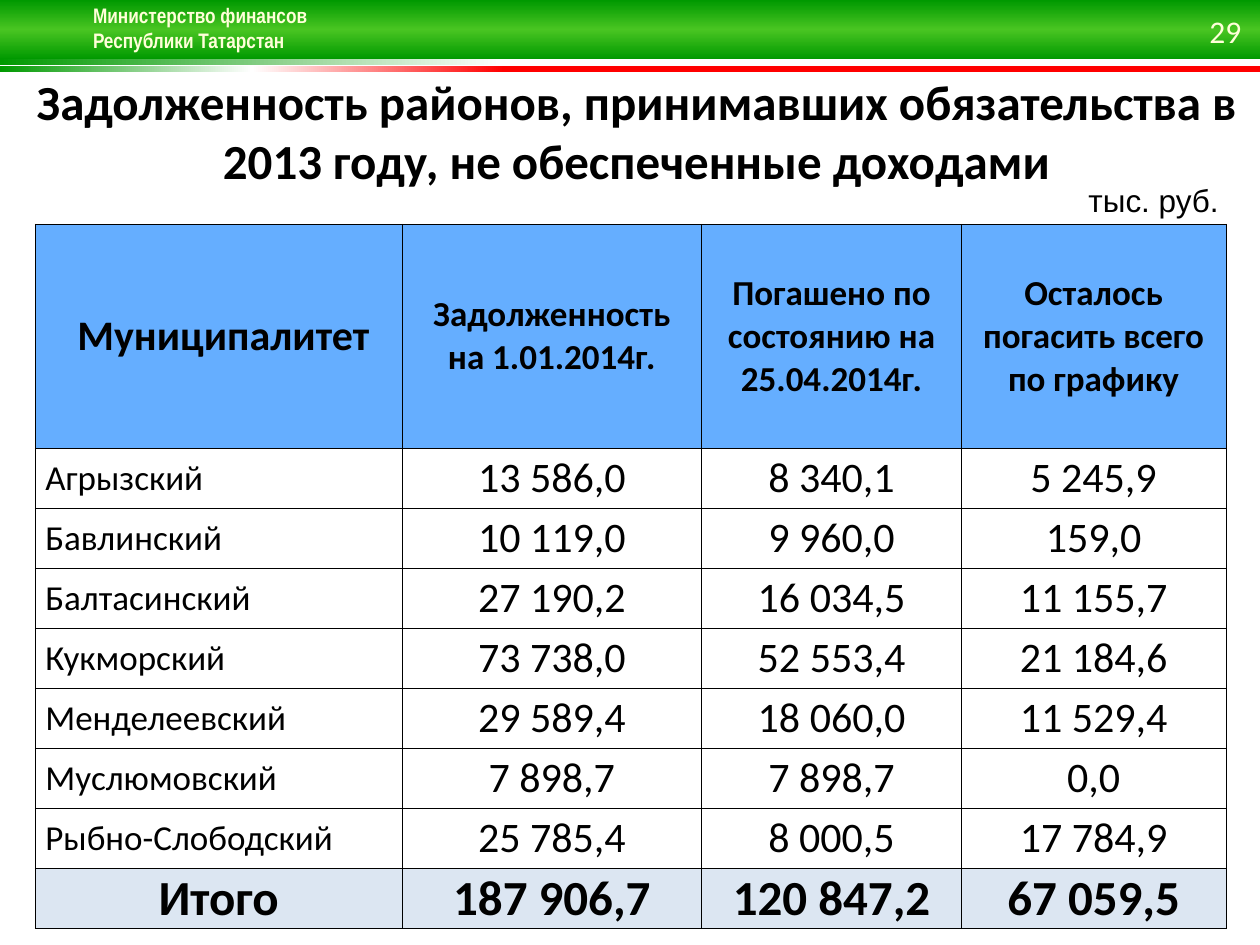
import pptx
import pptx.util
import pptx.dml.color
import pptx.enum.shapes
import pptx.enum.text
import pptx.oxml
import pptx.oxml.ns
import lxml.etree

Inches = pptx.util.Inches
Pt = pptx.util.Pt
qn = pptx.oxml.ns.qn
Align = pptx.enum.text.PP_ALIGN
Anchor = pptx.enum.text.MSO_ANCHOR

COLORS = {
    "black": "000000",
    "white": "FFFFFF",
    "cream": "FFFFD9",
    "green": "009900",
    "light_green": "49C522",
    "red": "FF0000",
    "header": "65AEFF",
    "total": "DCE6F2",
}

FORMATS = {
    "ministry": {"name": "Arial Narrow", "size": Pt(12), "bold": True},
    "title": {"name": "Calibri", "size": Pt(28), "bold": True},
    "page": {"name": "Calibri", "size": Pt(18), "bold": False},
    "unit": {"name": "Arial", "size": Pt(18), "bold": False},
    "corner": {"name": "Calibri", "size": Pt(24), "bold": True},
    "header": {"name": "Calibri", "size": Pt(20), "bold": True},
    "district": {"name": "Calibri", "size": Pt(20), "bold": False},
    "amount": {"name": "Calibri", "size": Pt(24), "bold": False},
    "total": {"name": "Calibri", "size": Pt(28), "bold": True},
}

HEADINGS = [
    " Муниципалитет",
    "Задолженность на 1.01.2014г.",
    "Погашено по состоянию на 25.04.2014г.",
    "Осталось погасить всего по графику",
]
DEBTS = [
    ["Агрызский", "13 586,0", "8 340,1", "5 245,9"],
    ["Бавлинский", "10 119,0", "9 960,0", "159,0"],
    ["Балтасинский", "27 190,2", "16 034,5", "11 155,7"],
    ["Кукморский", "73 738,0", "52 553,4", "21 184,6"],
    ["Менделеевский", "29 589,4", "18 060,0", "11 529,4"],
    ["Муслюмовский", "7 898,7", "7 898,7", "0,0"],
    ["Рыбно-Слободский", "25 785,4", "8 000,5", "17 784,9"],
]
TOTALS = ["Итого", "187 906,7", "120 847,2", "67 059,5"]


class DebtSlide:
    def __init__(self, presentation):
        self.slide = presentation.slides.add_slide(presentation.slide_layouts[5])

    def color(self, name):
        return pptx.dml.color.RGBColor.from_string(COLORS[name])

    def fill_text(self, frame, text, style, color="black", align=Align.LEFT):
        paragraph = frame.paragraphs[0]
        paragraph.alignment = align
        for index, line in enumerate(text.split("\n")):
            if index:
                paragraph.add_line_break()
            run = paragraph.add_run()
            run.text = line
            for key, value in FORMATS[style].items():
                setattr(run.font, key, value)
            run.font.color.rgb = self.color(color)
        return paragraph

    def band(self, top, height, stops, angle):
        band = self.slide.shapes.add_shape(
            pptx.enum.shapes.MSO_SHAPE.RECTANGLE,
            0, Inches(top), Inches(10), Inches(height))
        band.shadow.inherit = False
        band.line.fill.background()
        band.fill.gradient()
        band.fill.gradient_angle = angle
        stop_list = next(band._element.iter(qn("a:gsLst")))
        for default_stop in list(stop_list):
            stop_list.remove(default_stop)
        for position, name in stops:
            stop = lxml.etree.SubElement(stop_list, qn("a:gs"), pos=str(position * 1000))
            lxml.etree.SubElement(stop, qn("a:srgbClr"), val=COLORS[name])

    def title(self, text, left, top, width, height):
        title = self.slide.shapes.title
        title.left, title.top = Inches(left), Inches(top)
        title.width, title.height = Inches(width), Inches(height)
        frame = title.text_frame
        layout = {
            "word_wrap": True,
            "auto_size": pptx.enum.text.MSO_AUTO_SIZE.NONE,
            "vertical_anchor": Anchor.TOP,
            "margin_left": Inches(0.19),
        }
        for key, value in layout.items():
            setattr(frame, key, value)
        self.fill_text(frame, text, "title", align=Align.CENTER)

    def label(self, text, left, top, width, height, style, color, wrap=True):
        box = self.slide.shapes.add_textbox(
            Inches(left), Inches(top), Inches(width), Inches(height))
        box.text_frame.word_wrap = wrap
        return self.fill_text(box.text_frame, text, style, color)

    def text_shadow(self, paragraph):
        for run in paragraph.runs:
            effects = pptx.oxml.parse_xml(
                f'<a:effectLst {pptx.oxml.ns.nsdecls("a")}>'
                '<a:outerShdw blurRad="38100" dist="38100" dir="2700000">'
                f'<a:srgbClr val="{COLORS["black"]}"><a:alpha val="60000"/></a:srgbClr>'
                '</a:outerShdw></a:effectLst>')
            run.font._element.find(qn("a:solidFill")).addnext(effects)

    def borders(self, cell):
        properties = cell._tc.get_or_add_tcPr()
        for side in ("lnL", "lnR", "lnT", "lnB"):
            line = lxml.etree.SubElement(properties, qn(f"a:{side}"), w=str(Pt(0.5)))
            fill = lxml.etree.SubElement(line, qn("a:solidFill"))
            lxml.etree.SubElement(fill, qn("a:srgbClr"), val=COLORS["black"])

    def cell(self, cell, text, style, align, fill):
        layout = {
            "vertical_anchor": Anchor.MIDDLE,
            "margin_left": Inches(0.08),
            "margin_right": Inches(0.08),
            "margin_top": 0,
            "margin_bottom": 0,
        }
        for key, value in layout.items():
            setattr(cell, key, value)
        self.borders(cell)
        if fill:
            cell.fill.solid()
            cell.fill.fore_color.rgb = self.color(fill)
        else:
            cell.fill.background()
        self.fill_text(cell.text_frame, text, style, align=align)

    def table(self, left, top, height, widths, header_height):
        rows = [HEADINGS, *DEBTS, TOTALS]
        table = self.slide.shapes.add_table(
            len(rows), len(widths), Inches(left), Inches(top),
            Inches(sum(widths)), Inches(height)).table
        table.first_row = table.horz_banding = False
        for column, width in zip(table.columns, widths):
            column.width = Inches(width)
        row_height = (height - header_height) / (len(rows) - 1)
        for row_index, row in enumerate(rows):
            table.rows[row_index].height = Inches(row_height if row_index else header_height)
            for column_index, text in enumerate(row):
                align, fill = Align.CENTER, None
                if row is HEADINGS:
                    style, fill = "header" if column_index else "corner", "header"
                elif row is TOTALS:
                    style, fill = "total", "total"
                elif column_index:
                    style = "amount"
                else:
                    style, align = "district", Align.LEFT
                self.cell(table.cell(row_index, column_index), text, style, align, fill)


def main():
    presentation = pptx.Presentation()
    presentation.slide_width, presentation.slide_height = Inches(10), Inches(7.5)
    page = DebtSlide(presentation)
    page.band(0.47, 0.05, [(0, "white"), (60, "white"), (100, "green")], 180)
    page.band(0.52, 0.05, [(60, "red"), (80, "white"), (100, "green")], 180)
    page.band(0, 0.47, [(0, "green"), (50, "light_green"), (100, "green")], 90)
    ministry = page.label("Министерство финансов\nРеспублики Татарстан",
                          0.64, -0.03, 1.92, 0.71, "ministry", "cream")
    page.text_shadow(ministry)
    page.title("Задолженность районов, принимавших обязательства в 2013 году, "
               "не обеспеченные доходами", 0.05, 0.52, 9.91, 1)
    page.label("29", 9.5, 0.05, 0.47, 0.34, "page", "cream")
    page.table(0.28, 1.78, 5.59, [2.91, 2.38, 2.06, 2.1], 1.78)
    page.label("тыс. руб.", 8.54, 1.39, 1.25, 0.4, "unit", "black", wrap=False)
    presentation.save("out.pptx")


if __name__ == "__main__":
    main()
